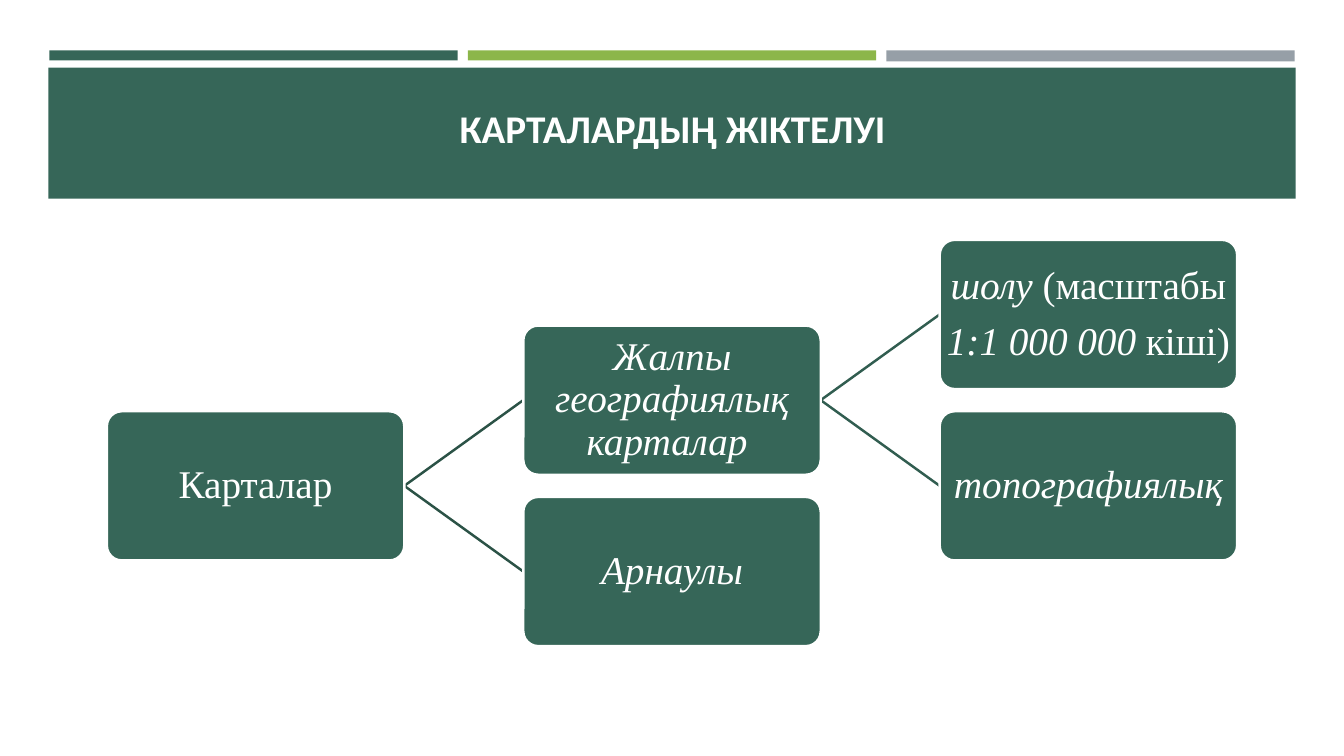
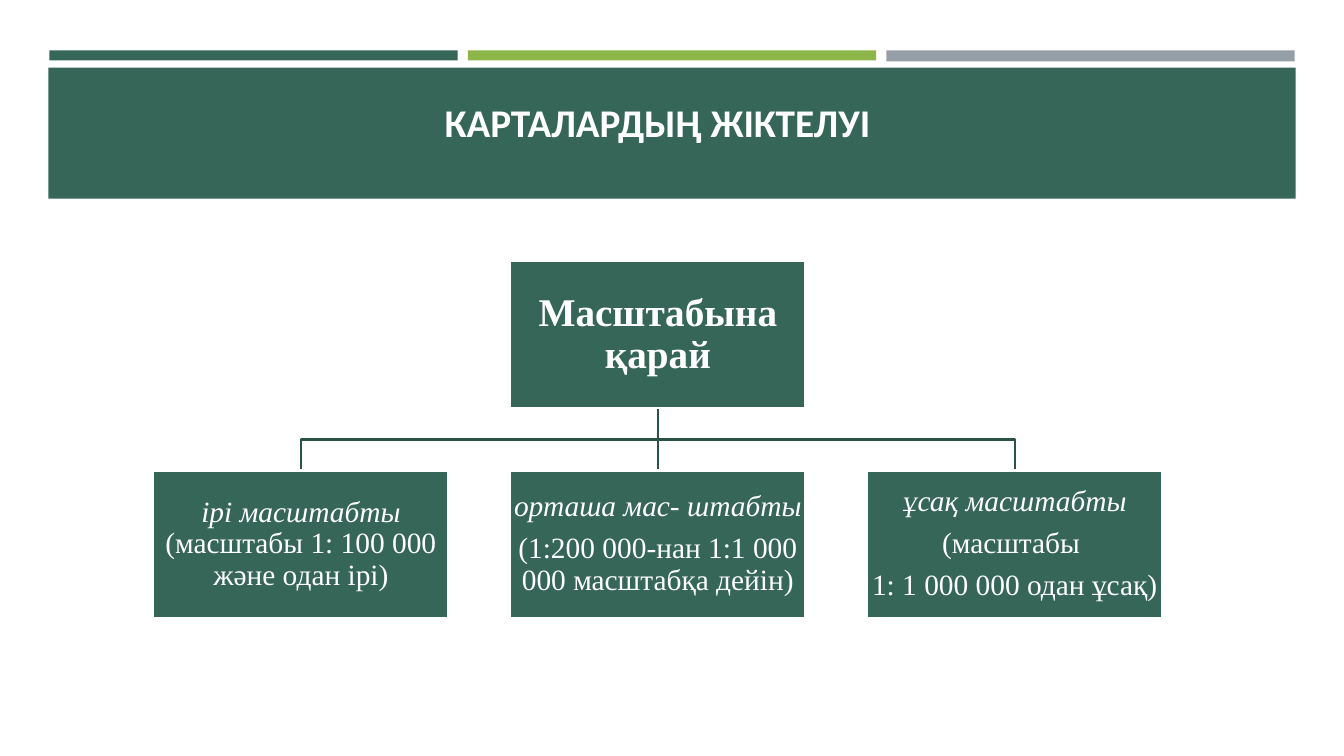
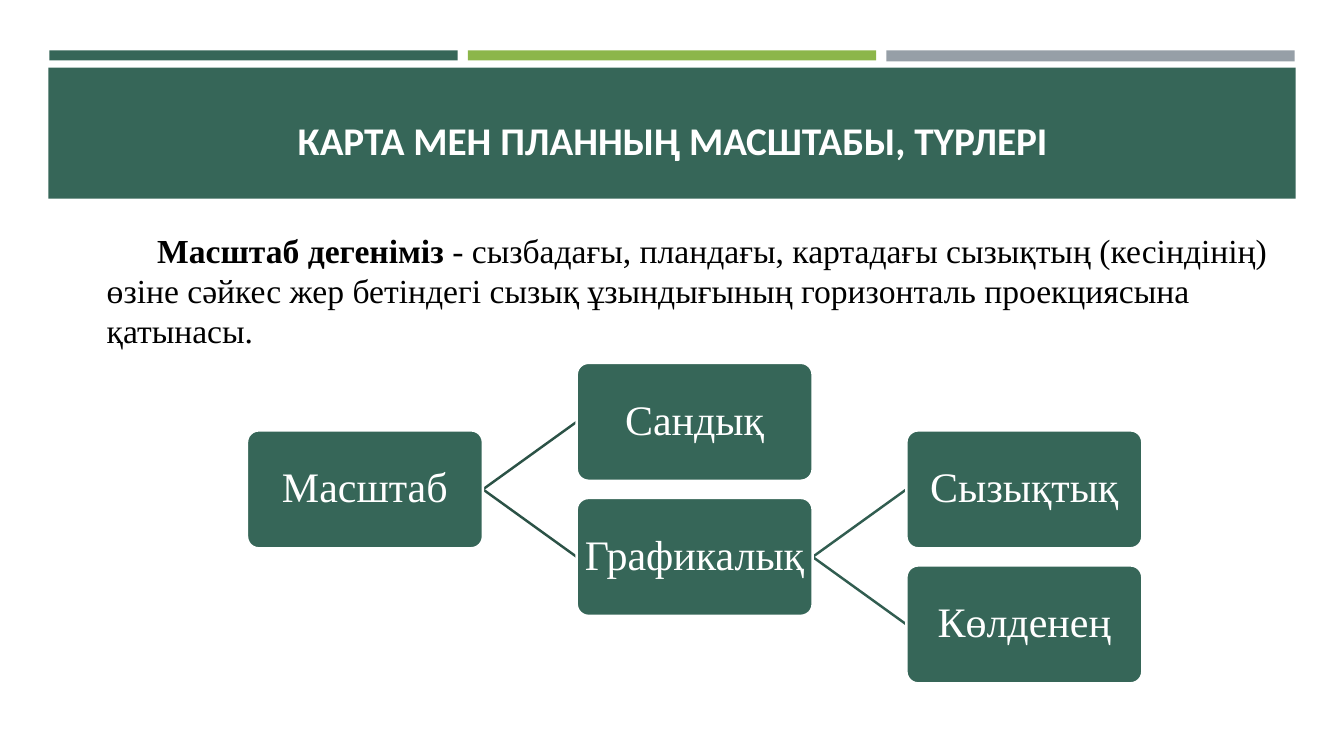
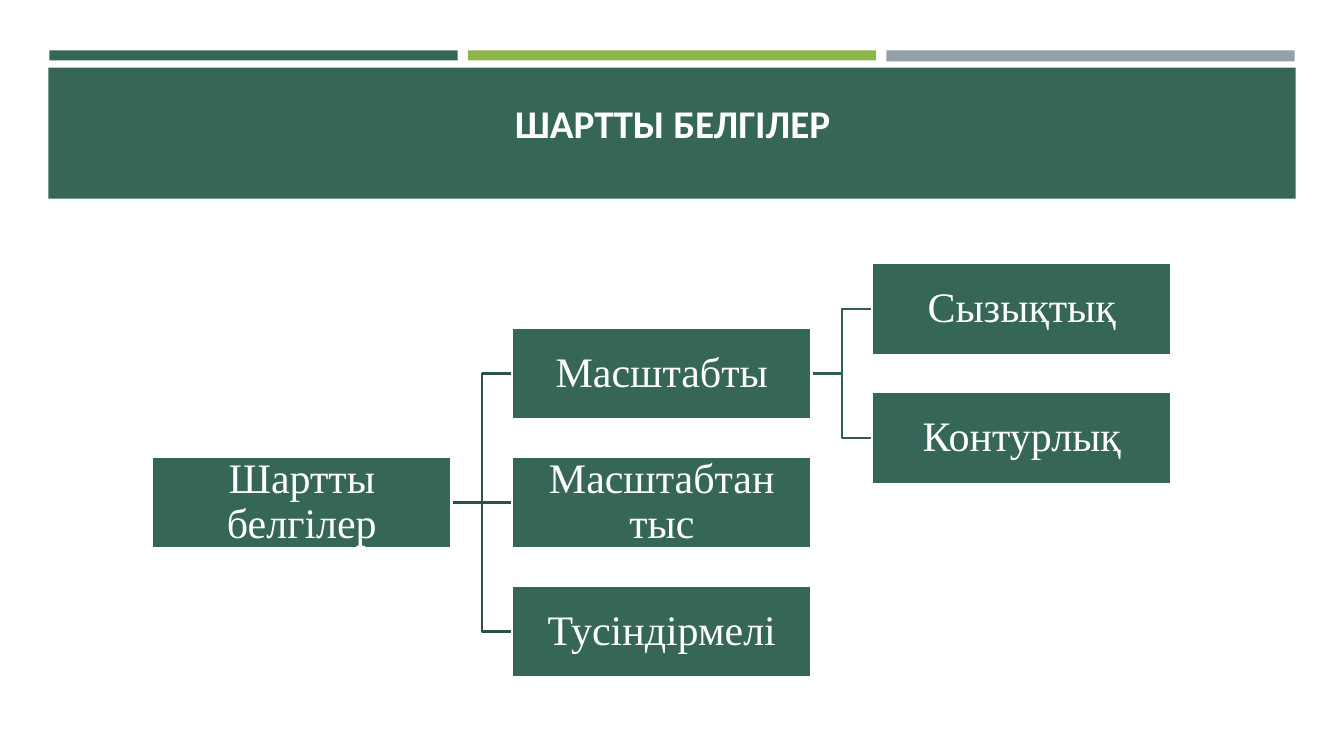
"""Build four slides on map classification, scales and map symbols."""
from pptx import Presentation
from pptx.dml.color import RGBColor
from pptx.enum.shapes import MSO_CONNECTOR, MSO_SHAPE
from pptx.enum.text import MSO_ANCHOR, MSO_AUTO_SIZE, PP_ALIGN
from pptx.oxml import parse_xml
from pptx.oxml.ns import nsdecls
from pptx.util import Inches, Pt

RECT, ROUND = MSO_SHAPE.RECTANGLE, MSO_SHAPE.ROUNDED_RECTANGLE
STRAIGHT = MSO_CONNECTOR.STRAIGHT
CENTER, LEFT = PP_ALIGN.CENTER, PP_ALIGN.LEFT
BOTTOM, MIDDLE = MSO_ANCHOR.BOTTOM, MSO_ANCHOR.MIDDLE
TOP_SIDE, LEFT_SIDE, BOTTOM_SIDE, RIGHT_SIDE = range(4)

COLORS = {"green": "366658", "lime": "8CB64A", "gray": "969FA7", "white": "FFFFFF",
          "black": "000000", "line1": "2B5246", "line2": "315D50"}
TITLE_FONT, BODY_FONT = "Calibri", "Times New Roman"
LINE_WIDTH = Pt(1.75)

BANDS = [
    ("green", (0.49, 0.5, 4.05, 0.1)),
    ("lime", (4.64, 0.5, 4.05, 0.1)),
    ("gray", (8.79, 0.5, 4.05, 0.11)),
    ("green", (0.48, 0.67, 12.37, 1.3)),
]

SLIDES = [
    {
        "title": "КАРТАЛАРДЫҢ ЖІКТЕЛУІ", "title_box": (0.64, 0.86, 12.06, 0.69),
        "shape": ROUND, "origin": (1.06, 2.38), "step": (4.13, 0.85),
        "box": (2.95, 1.48), "inset": 0.02, "size": 28, "links": "straight",
        "nodes": {
            "maps": (0, 2, [[("Карталар", "")]]),
            "general": (1, 1, [[("Жалпы географиялық карталар ", "i")]]),
            "special": (1, 3, [[("Арнаулы", "i")]]),
            "overview": (2, 0, [[("шолу ", "i"), ("(масштабы ", "")],
                                [("1:1 000 000 ", "i"), ("кіші) ", "")]]),
            "topographic": (2, 2, [[("топографиялық", "i")]]),
        },
        "forks": [("maps", ["general", "special"], "line1"),
                  ("general", ["overview", "topographic"], "line2")],
    },
    {
        "title": "КАРТАЛАРДЫҢ ЖІКТЕЛУІ", "title_box": (0.49, 0.38, 12.06, 1.11),
        "shape": RECT, "origin": (1.52, 2.59), "step": (3.54, 2.08),
        "box": (2.93, 1.46), "inset": 0.01, "size": 21, "links": "down",
        "sizes": {"by_scale": 28},
        "nodes": {
            "by_scale": (1, 0, [[("Масштабына қарай", "b")]]),
            "large": (0, 1, [[("ірі масштабты ", "i"),
                              ("(масштабы 1: 100 000 жəне одан ірі)", "")]]),
            "medium": (1, 1, [[("орташа мас- штабты ", "i")],
                              [("(1:200 000-нан 1:1 000 000 масштабқа дейін)", "")]]),
            "small": (2, 1, [[("ұсақ масштабты", "i")], [("(масштабы ", "")],
                             [("1: 1 000 000 одан ұсақ)", "")]]),
        },
        "forks": [("by_scale", ["large", "medium", "small"], "line1")],
    },
    {
        "title": "КАРТА МЕН ПЛАННЫҢ МАСШТАБЫ, ТҮРЛЕРІ", "title_box": (0.64, 0.77, 12.06, 0.9),
        "intro": [[("Масштаб дегеніміз ", "b"),
                   ("- сызбадағы, пландағы, картадағы сызықтың (кесіндінің) өзіне сәйкес жер "
                    "бетіндегі сызық ұзындығының горизонталь проекциясына қатынасы.", "")]],
        "shape": ROUND, "origin": (2.45, 3.6), "step": (3.27, 0.67),
        "box": (2.34, 1.17), "inset": 0.02, "size": 30, "links": "straight",
        "nodes": {
            "scale": (0, 1, [[("Масштаб", "")]]),
            "numeric": (1, 0, [[("Сандық", "")]]),
            "graphic": (1, 2, [[("Графикалық", "")]]),
            "linear": (2, 1, [[("Сызықтық", "")]]),
            "transverse": (2, 3, [[("Көлденең", "")]]),
        },
        "forks": [("scale", ["numeric", "graphic"], "line1"),
                  ("graphic", ["linear", "transverse"], "line2")],
    },
    {
        "title": "ШАРТТЫ БЕЛГІЛЕР", "title_box": (0.64, 0.77, 12.06, 0.73),
        "shape": RECT, "origin": (1.51, 2.61), "step": (3.57, 0.64),
        "box": (2.97, 0.91), "inset": 0.02, "size": 30, "links": "across",
        "nodes": {
            "symbols": (0, 3, [[("Шартты белгілер", "")]]),
            "to_scale": (1, 1, [[("Масштабты", "")]]),
            "off_scale": (1, 3, [[("Масштабтан тыс", "")]]),
            "explanatory": (1, 5, [[("Тусіндірмелі", "")]]),
            "linear": (2, 0, [[("Сызықтық", "")]]),
            "contour": (2, 2, [[("Контурлық", "")]]),
        },
        "forks": [("symbols", ["to_scale", "off_scale", "explanatory"], "line1"),
                  ("to_scale", ["linear", "contour"], "line2")],
    },
]


def rgb(name):
    return RGBColor.from_string(COLORS[name])


def add_runs(p, runs, size, font, color):
    for text, style in runs:
        r = p.add_run()
        r.text = text
        r.font.name, r.font.size = font, Pt(size)
        r.font.bold, r.font.italic = "b" in style, "i" in style
        r.font.color.rgb = rgb(color)


def add_paragraphs(tf, paragraphs, size, color, align):
    for i, runs in enumerate(paragraphs):
        p = tf.add_paragraph() if i else tf.paragraphs[0]
        p.alignment = align
        add_runs(p, runs, size, BODY_FONT, color)


def add_box(s, shape, at, color):
    sp = s.shapes.add_shape(shape, *map(Inches, at))
    sp.shadow.inherit = False
    sp.fill.solid()
    sp.fill.fore_color.rgb = rgb(color)
    sp.line.fill.background()
    return sp


def add_bands(s, layout):
    """Draw the shared bands and place them on the layout."""
    for i, (color, at) in enumerate(BANDS):
        sp = add_box(s, RECT, at, color)
        sp.element.nvSpPr.cNvPr.set("id", str(100 + i))
        layout.shapes.element.insert(2 + i, sp.element)


def set_title(s, text, at):
    title = s.shapes.title
    title.left, title.top, title.width, title.height = map(Inches, at)
    tf = title.text_frame
    tf.auto_size, tf.vertical_anchor, tf.word_wrap = MSO_AUTO_SIZE.NONE, BOTTOM, True
    tf.paragraphs[0].alignment = CENTER
    add_runs(tf.paragraphs[0], [(text, "b")], 28, TITLE_FONT, "white")


def add_intro(s, paragraphs):
    tf = s.shapes.add_textbox(*map(Inches, (0.96, 2.23, 11.85, 1.31))).text_frame
    tf.word_wrap = True
    add_paragraphs(tf, paragraphs, 24, "black", LEFT)
    tf.paragraphs[0]._p.get_or_add_pPr().set("indent", str(Inches(0.5)))


def add_node(s, data, key):
    col, row, paragraphs = data["nodes"][key]
    (x, y), (dx, dy) = data["origin"], data["step"]
    size = data.get("sizes", {}).get(key, data["size"])
    sp = add_box(s, data["shape"], (x + col * dx, y + row * dy, *data["box"]), "green")
    if data["shape"] == ROUND:
        sp.adjustments[0] = 0.1
    sp.line.color.rgb, sp.line.width = rgb("white"), LINE_WIDTH
    tf = sp.text_frame
    tf.word_wrap, tf.vertical_anchor = True, MIDDLE
    tf.margin_left = tf.margin_right = tf.margin_top = tf.margin_bottom = Inches(data["inset"])
    add_paragraphs(tf, paragraphs, size, "white", CENTER)
    for p in tf.paragraphs:
        p.line_spacing, p.space_after = 0.9, Pt(0.35 * size)
    return sp


def side_point(sp, side):
    x = {LEFT_SIDE: 0, RIGHT_SIDE: sp.width}.get(side, sp.width // 2)
    y = {TOP_SIDE: 0, BOTTOM_SIDE: sp.height}.get(side, sp.height // 2)
    return sp.left + x, sp.top + y


def add_straight(s, start, end, parent, out_side, child, in_side):
    line = s.shapes.add_connector(STRAIGHT, *start, *end)
    line.begin_connect(parent, out_side)
    line.end_connect(child, in_side)
    line.element.spPr.append(parse_xml("<a:effectLst %s/>" % nsdecls("a")))
    return line


def add_bent(s, start, end, down):
    """Draw an open outline that turns twice, halfway between its ends."""
    if down:
        middle = (start[1] + end[1]) // 2
        turns = [(start[0], middle), (end[0], middle)]
    else:
        middle = (start[0] + end[0]) // 2
        turns = [(middle, start[1]), (middle, end[1])]
    builder = s.shapes.build_freeform(*start)
    builder.add_line_segments(turns + [end], close=False)
    bent = builder.convert_to_shape()
    bent.shadow.inherit = False
    bent.fill.background()
    return bent


def add_fork(s, parent, children, color, links):
    """Link a parent to each child, behind the boxes."""
    down = links == "down"
    out_side, in_side = (BOTTOM_SIDE, TOP_SIDE) if down else (RIGHT_SIDE, LEFT_SIDE)
    start = side_point(parent, out_side)
    for child in children:
        end = side_point(child, in_side)
        level = start[0] == end[0] if down else start[1] == end[1]
        if level or links == "straight":
            link = add_straight(s, start, end, parent, out_side, child, in_side)
        else:
            link = add_bent(s, start, end, down)
        link.line.color.rgb, link.line.width = rgb(color), LINE_WIDTH
        s.shapes.element.insert(2, link.element)


def main():
    prs = Presentation()
    prs.slide_width, prs.slide_height = Inches(13.33), Inches(7.5)
    layout = prs.slide_layouts[5]
    for i, data in enumerate(SLIDES):
        s = prs.slides.add_slide(layout)
        if i == 0:
            add_bands(s, layout)
        set_title(s, data["title"], data["title_box"])
        if "intro" in data:
            add_intro(s, data["intro"])
        boxes = {key: add_node(s, data, key) for key in data["nodes"]}
        for parent, children, color in data["forks"]:
            add_fork(s, boxes[parent], [boxes[c] for c in children], color, data["links"])
    prs.save("out.pptx")


if __name__ == "__main__":
    main()
